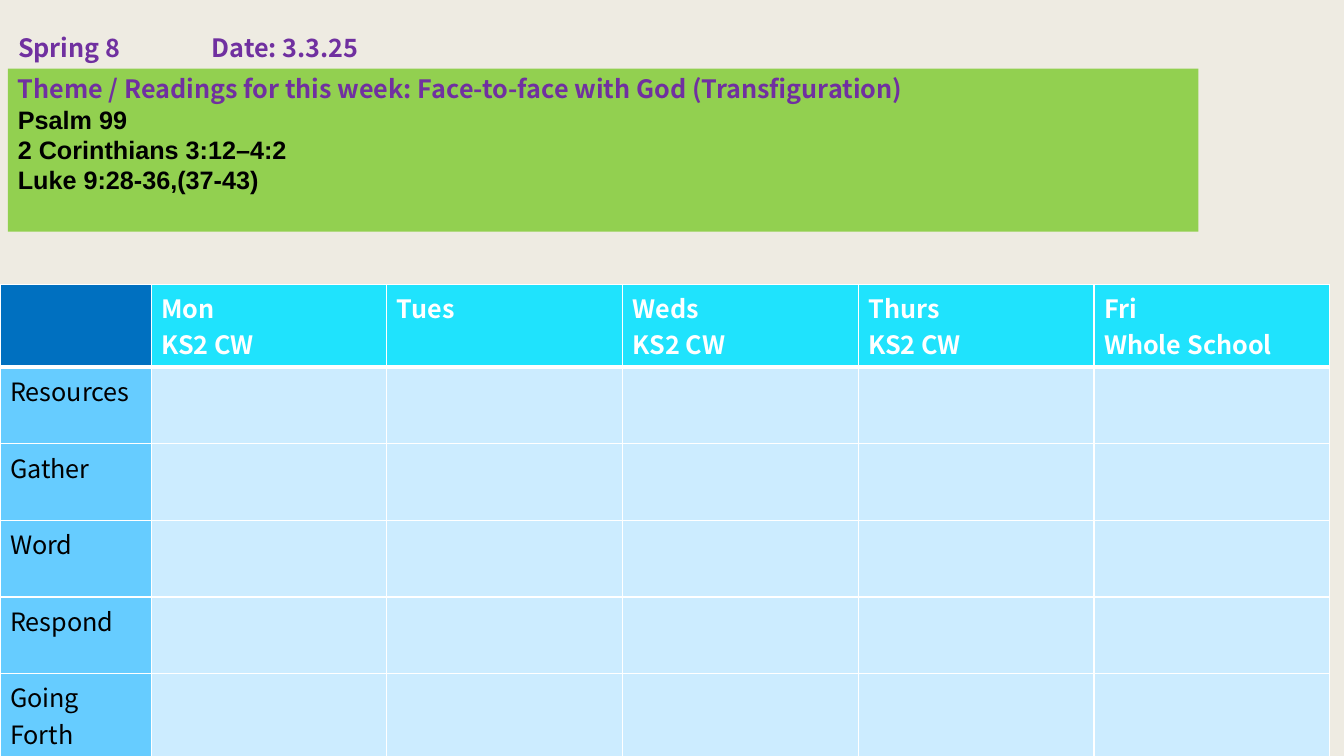
import pptx
import pptx.dml.color
import pptx.enum.shapes
import pptx.enum.text
import pptx.oxml
import pptx.oxml.ns
import pptx.util
from pptx.dml.color import RGBColor
from pptx.util import Cm

BACKGROUND = RGBColor(0xEE, 0xEB, 0xE2)
PURPLE = RGBColor(0x70, 0x30, 0xA0)
GREEN = RGBColor(0x92, 0xD0, 0x50)
BLUE = RGBColor(0x00, 0x70, 0xC0)
CYAN = RGBColor(0x1F, 0xE3, 0xFD)
SKY = RGBColor(0x66, 0xCC, 0xFF)
PALE = RGBColor(0xCC, 0xEC, 0xFF)
WHITE = RGBColor(0xFF, 0xFF, 0xFF)
BLACK = RGBColor(0x00, 0x00, 0x00)

SANS = "Noto Sans CJK JP"
READINGS = ["Psalm 99", "2 Corinthians 3:12–4:2", "Luke 9:28-36,(37-43)"]
DAYS = [
    [],
    ["Mon", "KS2 CW"],
    ["Tues"],
    ["Weds", "KS2 CW"],
    ["Thurs", "KS2 CW"],
    ["Fri", "Whole School"],
]
STAGES = ["Resources", "Gather", "Word", "Respond", "Going Forth"]


def add_lines(tf, lines, color, bold=True, font=SANS):
    for text in lines:
        p = tf.paragraphs[0] if not tf.text else tf.add_paragraph()
        p.alignment = pptx.enum.text.PP_ALIGN.LEFT
        r = p.add_run()
        r.text = text
        r.font.name = font
        r.font.size = pptx.util.Pt(18)
        r.font.bold = bold
        r.font.color.rgb = color


def set_frame(tf):
    tf.word_wrap = True
    tf.auto_size = pptx.enum.text.MSO_AUTO_SIZE.NONE
    tf.vertical_anchor = pptx.enum.text.MSO_ANCHOR.TOP


def add_title(s):
    sp = s.shapes.title
    sp.left, sp.top, sp.width, sp.height = Cm(0.2), Cm(0.69), Cm(32.97), Cm(1.02)
    set_frame(sp.text_frame)
    p = sp.text_frame.paragraphs[0]
    tabs = pptx.oxml.parse_xml(
        f'<a:tabLst {pptx.oxml.ns.nsdecls("a")}>'
        f'<a:tab pos="{Cm(4.88)}" algn="l"/></a:tabLst>'
    )
    p._p.get_or_add_pPr().append(tabs)
    add_lines(sp.text_frame, ["Spring 8\tDate: 3.3.25"], PURPLE)


def add_theme(s):
    sp = s.shapes.add_shape(
        pptx.enum.shapes.MSO_SHAPE.RECTANGLE, Cm(0.2), Cm(1.73), Cm(30), Cm(4.11)
    )
    sp.shadow.inherit = False
    sp.fill.solid()
    sp.fill.fore_color.rgb = GREEN
    sp.line.fill.background()
    set_frame(sp.text_frame)
    theme = "Theme / Readings for this week: Face-to-face with God (Transfiguration)"
    add_lines(sp.text_frame, [theme], PURPLE)
    add_lines(sp.text_frame, READINGS, BLACK, font="Arial")


def set_borders(cell, bottom):
    tcPr = cell._tc.get_or_add_tcPr()
    for side, points in (("L", 1), ("R", 1), ("T", 1), ("B", bottom)):
        tcPr.append(pptx.oxml.parse_xml(
            f'<a:ln{side} {pptx.oxml.ns.nsdecls("a")} w="{pptx.util.Pt(points)}">'
            f'<a:solidFill><a:srgbClr val="{WHITE}"/></a:solidFill></a:ln{side}>'
        ))


def fill_cell(cell, lines, fill, color, bold, bottom=1):
    set_borders(cell, bottom)
    cell.fill.solid()
    cell.fill.fore_color.rgb = fill
    add_lines(cell.text_frame, lines, color, bold)


def add_week_table(s):
    table = s.shapes.add_table(
        len(STAGES) + 1, len(DAYS), 0, Cm(7.16), Cm(33.5), Cm(11.58)
    ).table
    for i, column in enumerate(table.columns):
        column.width = Cm(5.94) if i else Cm(3.81)
    for row in table.rows:
        row.height = Cm(1.93)
    for i, lines in enumerate(DAYS):
        fill_cell(table.cell(0, i), lines, CYAN if i else BLUE, WHITE, True, 3)
    for i, stage in enumerate(STAGES, 1):
        fill_cell(table.cell(i, 0), [stage], SKY, BLACK, False)
        for j in range(1, len(DAYS)):
            fill_cell(table.cell(i, j), [], PALE, BLACK, False)


def main():
    prs = pptx.Presentation()
    prs.slide_width, prs.slide_height = Cm(33.87), Cm(19.05)
    s = prs.slides.add_slide(prs.slide_layouts[5])
    s.background.fill.solid()
    s.background.fill.fore_color.rgb = BACKGROUND
    add_title(s)
    add_theme(s)
    add_week_table(s)
    prs.save("out.pptx")


if __name__ == "__main__":
    main()
